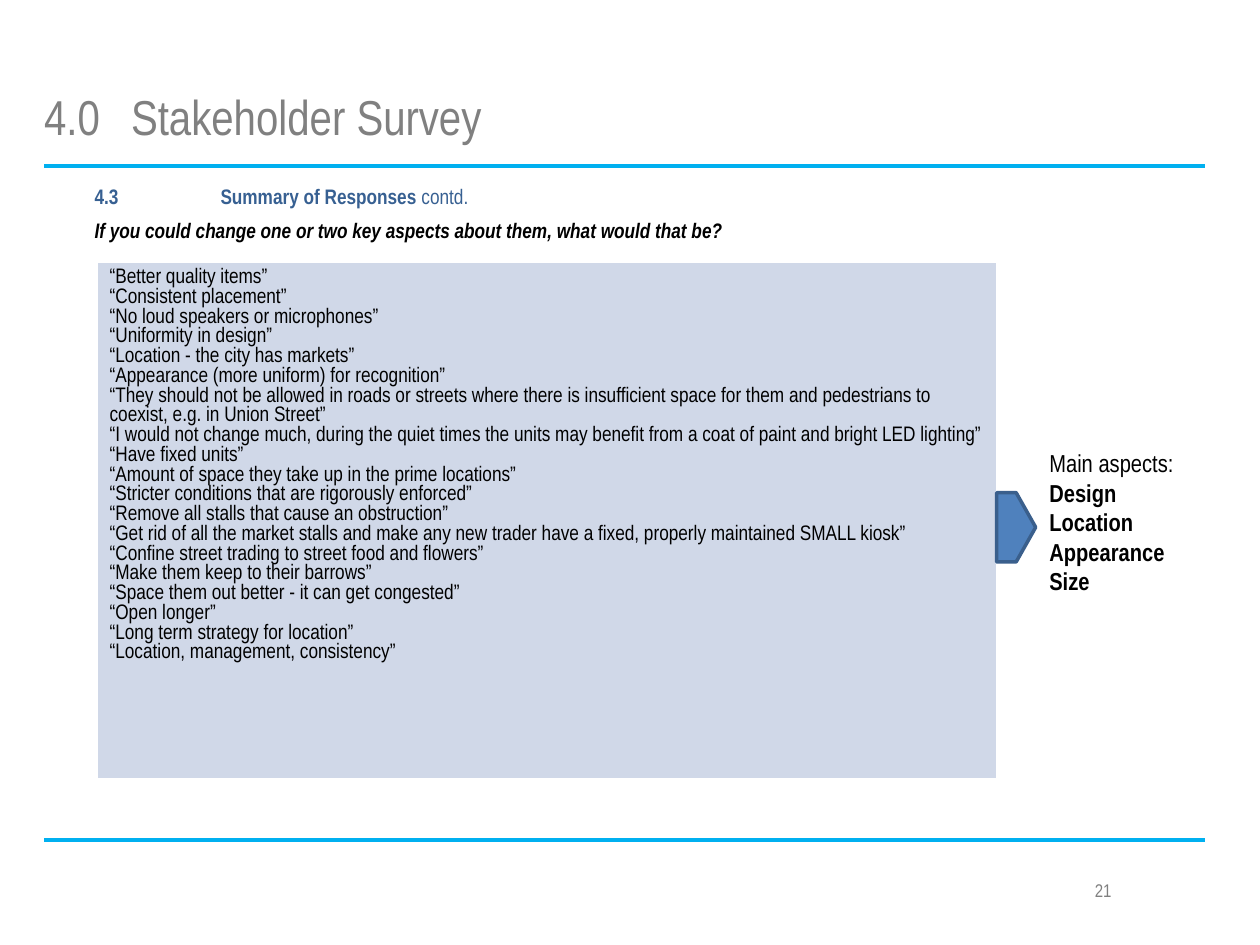
from lxml import etree
from pptx import Presentation
from pptx import util as u
from pptx.dml.color import RGBColor
from pptx.enum import shapes, text
from pptx.oxml.ns import qn

THEME = {
    "font": "Arial Narrow",
    "grey": "808080", "heading": "376092", "ink": "000000",
    "rule": "00B0F0", "panel": "D0D8E8", "border": "FFFFFF",
    "arrow": "4F81BD", "arrow_edge": "3A5F8C",
    "title_size": 28, "aspect_size": 14, "body_size": 12, "number_size": 10.5,
}

TITLE = "4.0 \tStakeholder Survey"
HEADING = ("4.3\tSummary of Responses", " contd.")
QUESTION = "If you could change one or two key aspects about them, what would that be?"
RESPONSES = [
    "Better quality items",
    "Consistent placement",
    "No loud speakers or microphones",
    "Uniformity in design",
    "Location - the city has markets",
    "Appearance (more uniform) for recognition",
    "They should not be allowed in roads or streets where there is insufficient space "
    "for them and pedestrians to coexist, e.g. in Union Street",
    "I would not change much, during the quiet times the units may benefit from a coat "
    "of paint and bright LED lighting",
    "Have fixed units",
    "Amount of space they take up in the prime locations",
    "Stricter conditions that are rigorously enforced",
    "Remove all stalls that cause an obstruction",
    "Get rid of all the market stalls and make any new trader have a fixed, properly "
    "maintained SMALL kiosk",
    "Confine street trading to street food and flowers",
    "Make them keep to their barrows",
    "Space them out better - it can get congested",
    "Open longer",
    "Long term strategy for location",
    "Location, management, consistency",
]
ASPECTS_LABEL = "Main aspects:"
ASPECTS = ["Design", "Location", "Appearance", "Size"]
PAGE_NUMBER = "21"
RULE_HEIGHTS = [1.32, 6.67]


def color(name):
    return RGBColor.from_string(THEME[name])


def style(paragraph, size, ink, bold=False, italic=False):
    font = paragraph.font
    font.name, font.size = THEME["font"], u.Pt(THEME[size])
    font.bold, font.italic = bold, italic
    font.color.rgb = color(ink)


def fill_paragraphs(frame, lines):
    frame.text = "\n".join(lines)
    return frame.paragraphs


def box(left, top, width, height):
    return [u.Inches(v) for v in (left, top, width, height)]


def place(placeholder, *position):
    placeholder.left, placeholder.top, placeholder.width, placeholder.height = box(*position)
    frame = placeholder.text_frame
    frame.margin_left = frame.margin_top = frame.margin_right = frame.margin_bottom = 0
    frame.auto_size = text.MSO_AUTO_SIZE.NONE
    frame.word_wrap = True
    return frame


def set_tab(paragraph, inches):
    tabs = etree.SubElement(paragraph._p.get_or_add_pPr(), qn("a:tabLst"))
    etree.SubElement(tabs, qn("a:tab"), pos=str(u.Inches(inches)), algn="l")


def plain_body(paragraph):
    properties = paragraph._p.get_or_add_pPr()
    properties.set("marL", "0")
    properties.set("indent", "0")
    properties.set("defTabSz", str(u.Inches(1)))
    paragraph.space_before = paragraph.space_after = u.Pt(2)
    etree.SubElement(properties, qn("a:buNone"))


def border_cell(cell):
    properties = cell._tc.get_or_add_tcPr()
    for position, side in enumerate(("lnL", "lnR", "lnT", "lnB")):
        edge = etree.Element(qn(f"a:{side}"), w=str(u.Pt(1)))
        solid = etree.SubElement(edge, qn("a:solidFill"))
        etree.SubElement(solid, qn("a:srgbClr"), val=THEME["border"])
        properties.insert(position, edge)


def add_rule(slide, height):
    rule = slide.shapes.add_connector(
        shapes.MSO_CONNECTOR.STRAIGHT, *box(0.35, height, 9.56, height))
    rule.line.color.rgb = color("rule")
    rule.line.width = u.Pt(2.25)
    etree.SubElement(rule._element.spPr, qn("a:effectLst"))


def add_headings(slide):
    title, heading, question = slide.placeholders
    title_frame = place(title, 0.35, 0.17, 9, 0.98)
    title_frame.vertical_anchor = text.MSO_ANCHOR.BOTTOM
    title_line, = fill_paragraphs(title_frame, [TITLE])
    title_line.alignment = text.PP_ALIGN.LEFT
    set_tab(title_line, 0.69)
    style(title_line, "title_size", "grey")

    heading_line = place(heading, 0.75, 1.46, 3.15, 0.32).paragraphs[0]
    plain_body(heading_line)
    style(heading_line, "body_size", "heading")
    for part, bold in zip(HEADING, (True, False)):
        run = heading_line.add_run()
        run.text, run.font.bold = part, bold

    question_line, = fill_paragraphs(place(question, 0.75, 1.73, 7.8, 0.32), [QUESTION])
    plain_body(question_line)
    style(question_line, "body_size", "ink", bold=True, italic=True)


def add_responses(slide):
    table = slide.shapes.add_table(1, 1, *box(0.77, 2.08, 7.14, 3.39)).table
    table.first_row = table.horz_banding = False
    cell = table.cell(0, 0)
    cell.fill.solid()
    cell.fill.fore_color.rgb = color("panel")
    border_cell(cell)
    for response in fill_paragraphs(cell.text_frame, [f"“{r}”" for r in RESPONSES]):
        style(response, "body_size", "ink")


def add_aspects(slide):
    frame = slide.shapes.add_textbox(*box(8.23, 3.51, 1.5, 1.28)).text_frame
    frame.word_wrap = True
    for index, line in enumerate(fill_paragraphs(frame, [ASPECTS_LABEL, *ASPECTS])):
        style(line, "aspect_size", "ink", bold=index > 0)

    arrow = slide.shapes.add_shape(shapes.MSO_SHAPE.PENTAGON, *box(7.91, 3.91, 0.31, 0.55))
    arrow.shadow.inherit = False
    arrow.fill.solid()
    arrow.fill.fore_color.rgb = color("arrow")
    arrow.line.color.rgb = color("arrow_edge")
    arrow.line.width = u.Pt(2)


def add_page_number(slide):
    frame = slide.shapes.add_textbox(*box(7.17, 6.93, 1.75, 0.5)).text_frame
    frame.word_wrap = True
    number, = fill_paragraphs(frame, [PAGE_NUMBER])
    number.alignment = text.PP_ALIGN.RIGHT
    style(number, "number_size", "grey")


def main():
    deck = Presentation()
    deck.slide_width, deck.slide_height = u.Inches(10), u.Inches(7.5)
    slide = deck.slides.add_slide(deck.slide_layouts.get_by_name("Two Content"))
    add_page_number(slide)
    for height in RULE_HEIGHTS:
        add_rule(slide, height)
    add_headings(slide)
    add_responses(slide)
    add_aspects(slide)
    deck.save("out.pptx")


if __name__ == "__main__":
    main()
